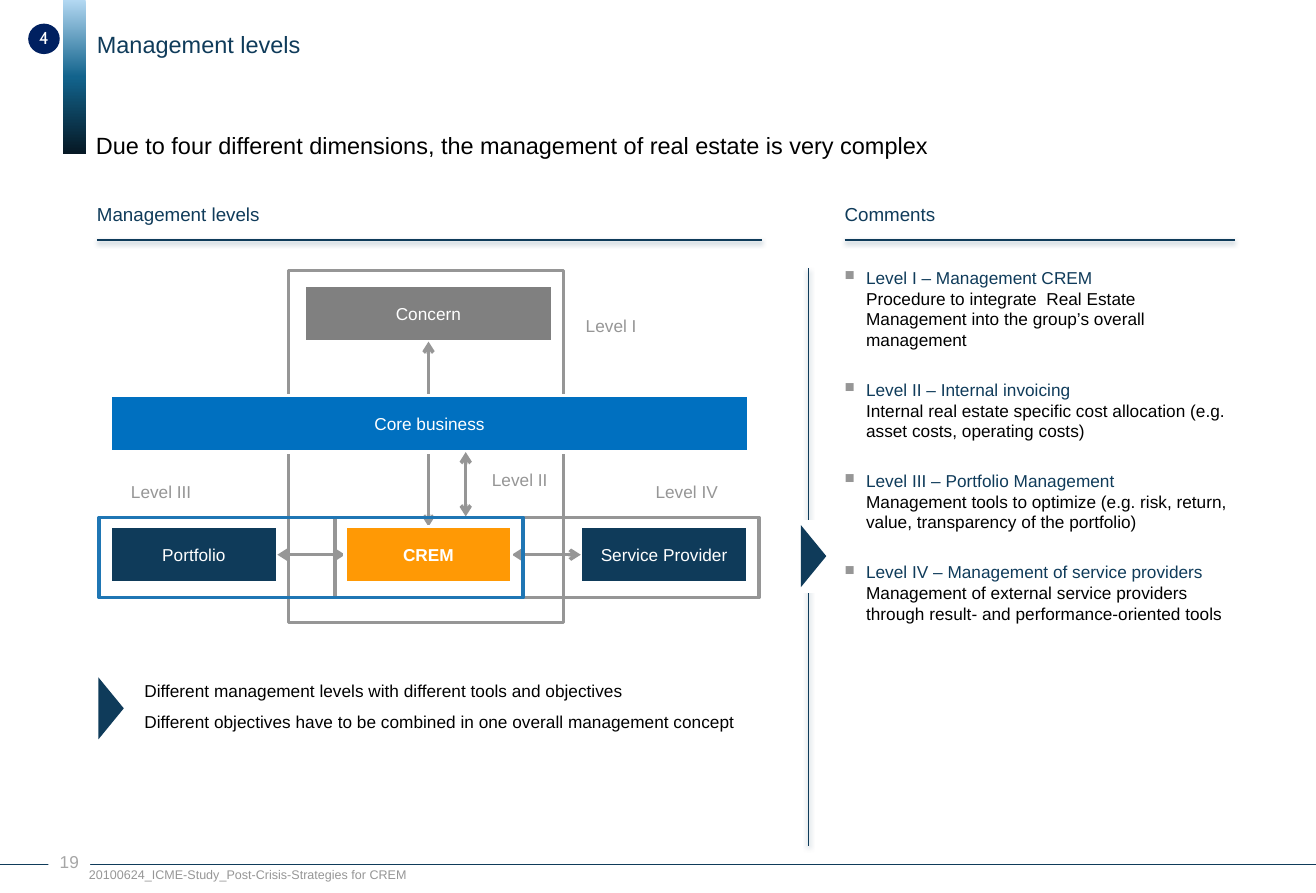
from copy import deepcopy
from dataclasses import dataclass

from lxml import etree
from pptx import Presentation
from pptx import util as u
from pptx.dml.color import RGBColor
from pptx.enum import shapes, text
from pptx.oxml.ns import qn


@dataclass(frozen=True)
class Theme:
    navy: str = "0F3B5A"
    blue: str = "0070C0"
    frame_blue: str = "1F76B4"
    badge: str = "002060"
    orange: str = "FF9905"
    gray: str = "969696"
    dark_gray: str = "808080"
    page_gray: str = "A6A6A6"
    black: str = "000000"
    white: str = "FFFFFF"
    fade: tuple = ("B3D8F2", "12638C", "061824")
    font: str = "Arial"
    badge_font: str = "Cabin"
    title: int = 15
    heading: int = 12
    body: int = 11
    footer: int = 8
    frame_line: float = 2.25
    box_line: float = 2


theme = Theme()
CELL = u.Inches(0.1)  # the grid is 116.7 columns by 79.2 rows
COLUMNS, ROWS = 116.7, 79.2
RECT = shapes.MSO_SHAPE.RECTANGLE
TRIANGLE = shapes.MSO_SHAPE.ISOSCELES_TRIANGLE
LEFT, CENTER = text.PP_ALIGN.LEFT, text.PP_ALIGN.CENTER
TOP, MIDDLE, BOTTOM = text.MSO_ANCHOR.TOP, text.MSO_ANCHOR.MIDDLE, text.MSO_ANCHOR.BOTTOM

deck = Presentation()
deck.slide_width, deck.slide_height = int(COLUMNS * CELL), int(ROWS * CELL)
slide = deck.slides.add_slide(deck.slide_layouts[6])


def panel(kind, at, paragraphs=(), fill=None, line=None, width=theme.box_line, color=theme.black,
          size=theme.body, font=theme.font, bold=False, align=LEFT, anchor=TOP, inset=(0, 0),
          gap=0, spacing=None):
    """Draw a shape, or a text box when kind is None, at grid cells (left, top, width, height)."""
    frame = [int(cells * CELL) for cells in at]
    if kind is None:
        item = slide.shapes.add_textbox(*frame)
    else:
        item = slide.shapes.add_shape(kind, *frame)
        item.shadow.inherit = False
    if fill:
        item.fill.solid()
        item.fill.fore_color.rgb = RGBColor.from_string(fill)
    else:
        item.fill.background()
    if line:
        item.line.color.rgb = RGBColor.from_string(line)
        item.line.width = u.Pt(width)
    else:
        item.line.fill.background()
    body = item.text_frame
    body.word_wrap, body.vertical_anchor = True, anchor
    body.margin_left = body.margin_right = int(inset[0] * CELL)
    body.margin_top = body.margin_bottom = int(inset[1] * CELL)
    for number, words in enumerate(paragraphs):
        paragraph = body.add_paragraph() if number else body.paragraphs[0]
        paragraph.alignment = align
        if number:
            paragraph.space_before = u.Pt(gap)
        if spacing:
            paragraph.line_spacing = spacing
        run = paragraph.add_run()
        run.text = words
        run.font.name, run.font.size, run.font.bold = font, u.Pt(size), bold
        run.font.color.rgb = RGBColor.from_string(color)
    return item


def connect(x1, y1, x2, y2, color=theme.navy, width=1, arrows=False, shadow=False):
    ends = [int(cells * CELL) for cells in (x1, y1, x2, y2)]
    link = slide.shapes.add_connector(shapes.MSO_CONNECTOR.STRAIGHT, *ends)
    link.line.color.rgb = RGBColor.from_string(color)
    link.line.width = u.Pt(width)
    if arrows:
        for end in ("a:headEnd", "a:tailEnd"):
            etree.SubElement(link.line._ln, qn(end), type="arrow")
    effects = etree.SubElement(link._element.spPr, qn("a:effectLst"))
    if shadow:
        cast = etree.SubElement(effects, qn("a:outerShdw"), blurRad=str(u.Pt(3.1)),
                                dist=str(u.Pt(1.6)), dir="5400000", rotWithShape="0")
        tint = etree.SubElement(cast, qn("a:srgbClr"), val=color)
        etree.SubElement(tint, qn("a:alpha"), val="38000")


# Page frame and headings
band = panel(RECT, (5.6, 0, 2, 13.7))
band.fill.gradient()
band.fill.gradient_angle = 270
stop_list = band._element.spPr.find(".//" + qn("a:gsLst"))
stop_list.append(deepcopy(stop_list[-1]))
for number, (stop, shade) in enumerate(zip(band.fill.gradient_stops, theme.fade)):
    stop.position = number / 2
    stop.color.rgb = RGBColor.from_string(shade)

connect(0, 76.7, COLUMNS, 76.7, width=0.75)
panel(None, (8.5, 7.6, 102, 6.6),
      ["Due to four different dimensions, the management of real estate is very complex"],
      size=theme.title, anchor=BOTTOM, spacing=0.9)
panel(None, (8.6, 2.7, 105, 2.5), ["Management levels"],
      color=theme.navy, size=theme.title, anchor=MIDDLE)
for heading, left, width in (("Management levels", 8.6, 59), ("Comments", 74.9, 34.6)):
    panel(None, (left, 18, width, 2), [heading], color=theme.navy, size=theme.heading)
    connect(left, 21.3, left + width, 21.3, shadow=True)

# Comments column
comments = (
    ("Level I – Management CREM",
     "Procedure to integrate  Real Estate Management into the group’s overall management"),
    ("Level II – Internal invoicing",
     "Internal real estate specific cost allocation (e.g. asset costs, operating costs)"),
    ("Level III – Portfolio Management",
     "Management tools to optimize (e.g. risk, return, value, transparency of the portfolio)"),
    ("Level IV – Management of service providers",
     "Management of external service providers through result- and performance-oriented tools"),
)
comment_body = panel(None, (74.9, 23.7, 34.6, 48.2)).text_frame
for number, (level, explanation) in enumerate(comments):
    comment = comment_body.add_paragraph() if number else comment_body.paragraphs[0]
    properties = comment._p.get_or_add_pPr()
    properties.set("marL", str(int(1.9 * CELL)))
    properties.set("indent", str(int(-1.9 * CELL)))
    bullet_color = etree.SubElement(properties, qn("a:buClr"))
    etree.SubElement(bullet_color, qn("a:srgbClr"), val=theme.gray)
    etree.SubElement(properties, qn("a:buSzPct"), val="80000")
    etree.SubElement(properties, qn("a:buChar"), char="■")
    if number:
        comment.space_before = u.Pt(12)
    comment.space_after = u.Pt(6.6)
    for words, color in ((level, theme.navy), (explanation, theme.black)):
        if words is explanation:
            comment.add_line_break()
        run = comment.add_run()
        run.text = words
        run.font.name, run.font.size = theme.font, u.Pt(theme.body)
        run.font.color.rgb = RGBColor.from_string(color)

# Divider and conclusion
connect(71.7, 23.8, 71.7, 75, shadow=True)
panel(RECT, (69.4, 46.3, 3.9, 6.2), fill=theme.white, line=theme.white)
for left, top in ((69.4, 48.2), (7.1, 61.7)):
    panel(TRIANGLE, (left, top, 5.5, 2.25), fill=theme.navy).rotation = 90
panel(None, (12.8, 60.3, 54.8, 4.8),
      ["Different management levels with different tools and objectives",
       "Different objectives have to be combined in one overall management concept"], gap=7.1)

# Level diagram, from back to front
BOX_HEIGHT, BASE, AXIS = 5, 46.7, 49.2
box_style = dict(line=theme.white, color=theme.white, align=CENTER, anchor=MIDDLE, inset=(1.1, 0.5))
frame_style = dict(width=theme.frame_line)
arrow_style = dict(color=theme.gray, width=theme.frame_line, arrows=True)

panel(RECT, (25.6, 24, 24.4, 31.2), line=theme.gray, **frame_style)
for unit, left, top, width, fill in (
        ("Service Provider", 51.5, BASE, 14.8, theme.navy),
        ("Concern", 27, 25.3, 22, theme.dark_gray),
        ("Portfolio", 9.8, BASE, 14.8, theme.navy)):
    panel(RECT, (left, top, width, BOX_HEIGHT), [unit], fill=fill, **box_style)
for ends in ((38, BASE, 38, 30.3), (51.5, AXIS, 45.4, AXIS), (30.6, AXIS, 24.6, AXIS)):
    connect(*ends, **arrow_style)
panel(RECT, (29.7, 45.9, 37.6, 7.1), line=theme.gray, **frame_style)
for unit, left, top, width, fill in (
        ("Core business", 9.8, 35.1, 56.6, theme.blue),
        ("CREM", 30.6, BASE, 14.8, theme.orange)):
    panel(RECT, (left, top, width, BOX_HEIGHT), [unit], fill=fill, bold=unit == "CREM", **box_style)
connect(41.3, 40.1, 41.3, 45.8, **arrow_style)
panel(RECT, (8.8, 45.9, 37.6, 7.1), line=theme.frame_blue, **frame_style)
for level, left, top in (("Level I", 48.7, 28), ("Level II", 40.6, 41.6),
                         ("Level III", 8.8, 42.7), ("Level IV", 55.4, 42.7)):
    panel(None, (left, top, 11, 1.9), [level], color=theme.gray, align=CENTER)

# Chapter badge and footer
panel(shapes.MSO_SHAPE.OVAL, (2.5, 2.1, 2.8, 2.7), ["4"], fill=theme.badge, color=theme.white,
      font=theme.badge_font, align=CENTER, anchor=MIDDLE, spacing=0.93)
panel(RECT, (4.3, 75, 3.7, 2.7), ["19"], fill=theme.white, color=theme.page_gray,
      align=CENTER, inset=(0.2, 0.5))
panel(None, (6.9, 76.4, 30.9, 2.4), ["20100624_ICME-Study_Post-Crisis-Strategies for CREM"],
      color=theme.gray, size=theme.footer, inset=(1, 0.5))

deck.save("out.pptx")
